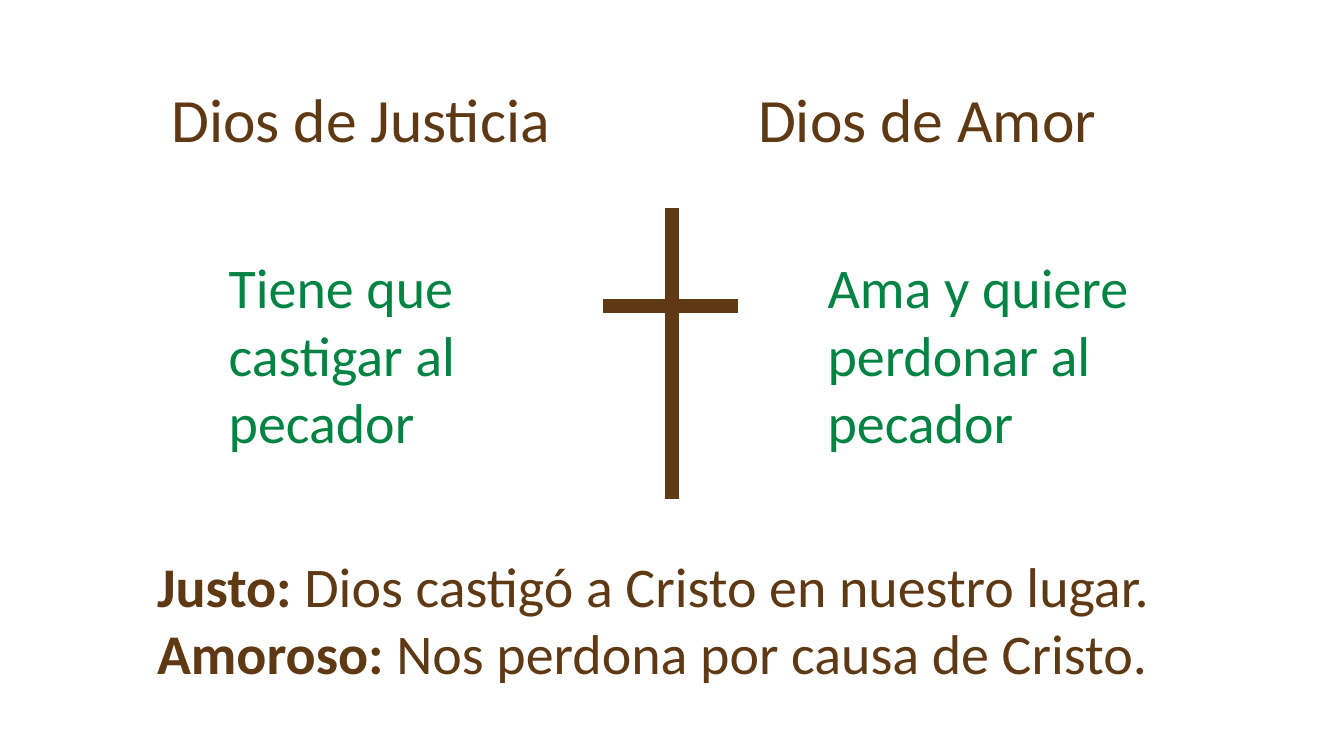
from lxml.etree import SubElement
from pptx import Presentation
from pptx.dml.color import RGBColor
from pptx.enum.shapes import MSO_CONNECTOR
from pptx.enum.text import MSO_AUTO_SIZE
from pptx.oxml.ns import qn
from pptx.util import Inches, Pt

COLORS = {"brown": "5F3913", "green": "018443"}


class SlideBuilder:
    font = "Calibri"

    def __init__(self, deck):
        self.page = deck.slides.add_slide(deck.slide_layouts[6])

    def text(self, left, top, width, height, paragraphs, size, color, tabs=()):
        """Each paragraph is a list of (words, bold) runs."""
        box = self.page.shapes.add_textbox(
            Inches(left), Inches(top), Inches(width), Inches(height))
        frame = box.text_frame
        frame.word_wrap = True
        frame.auto_size = MSO_AUTO_SIZE.SHAPE_TO_FIT_TEXT
        for index, runs in enumerate(paragraphs):
            para = frame.add_paragraph() if index else frame.paragraphs[0]
            if tabs:
                self.tab_stops(para, tabs)
            for words, bold in runs:
                span = para.add_run()
                span.text = words
                span.font.name = self.font
                span.font.size = Pt(size)
                span.font.bold = bold
                span.font.color.rgb = RGBColor.from_string(COLORS[color])

    def tab_stops(self, para, positions):
        properties = para._p.get_or_add_pPr()
        stops = SubElement(properties, qn("a:tabLst"))
        for position in positions:
            SubElement(stops, qn("a:tab"), pos=str(Inches(position)), algn="l")

    def line(self, x1, y1, x2, y2, color, width):
        line = self.page.shapes.add_connector(
            MSO_CONNECTOR.STRAIGHT, Inches(x1), Inches(y1), Inches(x2), Inches(y2))
        line.line.color.rgb = RGBColor.from_string(COLORS[color])
        line.line.width = Pt(width)
        SubElement(line._element.spPr, qn("a:effectLst"))


def main():
    deck = Presentation()
    deck.slide_width, deck.slide_height = Inches(13.33), Inches(7.5)
    slide = SlideBuilder(deck)

    # Headings of both columns
    slide.text(0.53, 0.75, 13.33, 0.84,
               [[("\tDios de Justicia\tDios de Amor", False)]],
               44, "brown", tabs=(1.07, 6.89))

    # Column texts
    for left, width, words in (
        (2.17, 3.06, "Tiene que castigar al pecador"),
        (8.11, 4.11, "Ama y quiere perdonar al pecador"),
    ):
        slide.text(left, 2.46, width, 2.12, [[(words, False)]], 40, "green")

    # Cross
    slide.line(6.67, 2.06, 6.67, 4.95, "brown", 10)
    slide.line(7.32, 3.04, 5.98, 3.04, "brown", 10)

    # Conclusion
    slide.text(1.46, 5.42, 12.16, 1.45, [
        [("Justo: ", True), ("Dios castigó a Cristo en nuestro lugar.", False)],
        [("Amoroso: ", True), ("Nos perdona por causa de Cristo.", False)],
    ], 40, "brown")

    deck.save("out.pptx")


if __name__ == "__main__":
    main()
